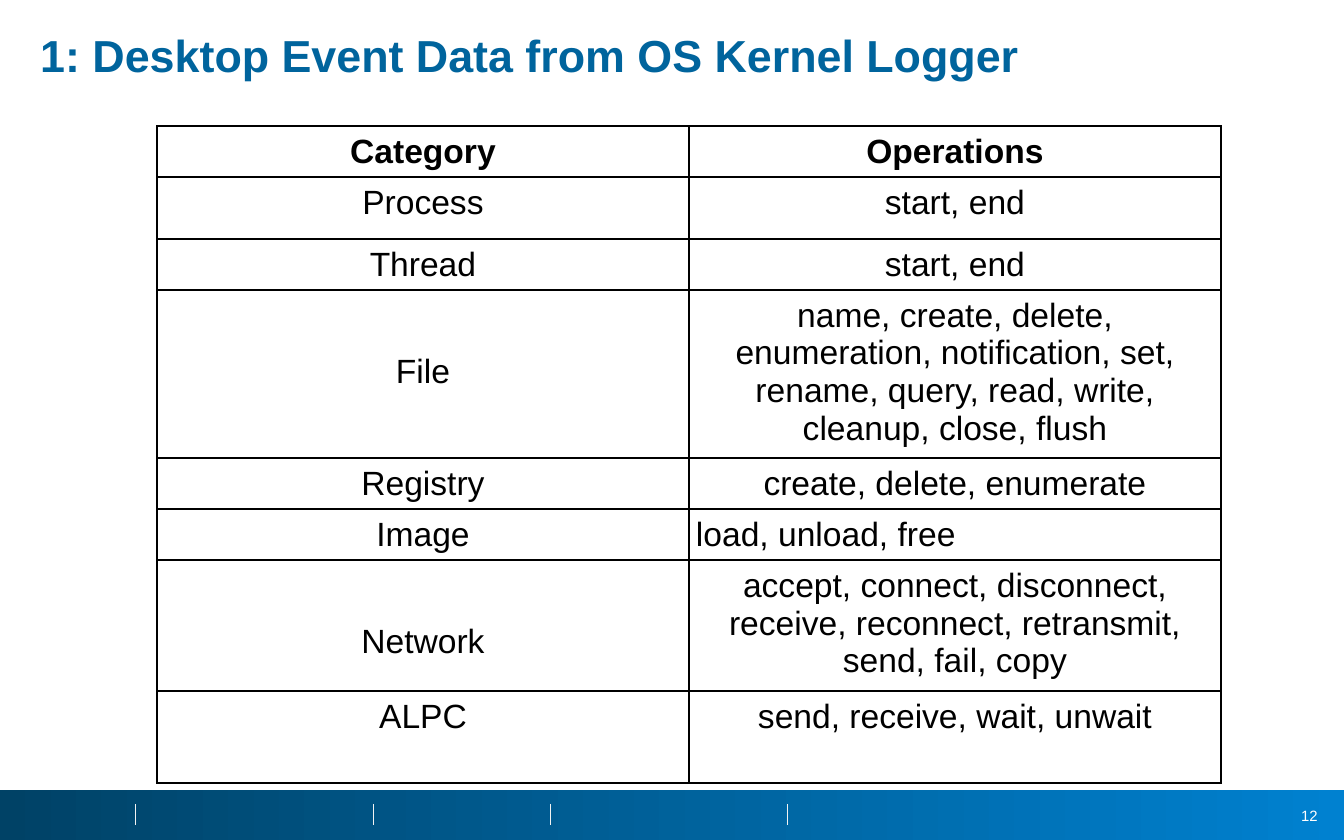
from lxml.etree import SubElement
from pptx import Presentation
from pptx.dml.color import RGBColor
from pptx.enum.shapes import MSO_CONNECTOR, MSO_SHAPE
from pptx.enum.text import MSO_ANCHOR as Anchor, PP_ALIGN as Align
from pptx.oxml.ns import qn
from pptx.util import Pt

EMU_PER_PX = 914400 / 134.4
FONT = "Arial"
COLORS = {
    "title": "00649D",
    "text": "000000",
    "bar_start": "004266",
    "bar_end": "0081D0",
    "divider": "F2F2F2",
    "page": "FFFFFF",
}
DIVIDERS = [135, 373, 550, 787]
HEADER = ("Category", "Operations", 51)
EVENTS = [
    ("Process", "start, end", 62),
    ("Thread", "start, end", 51),
    ("File", "name, create, delete, enumeration, notification, set, rename, "
             "query, read, write, cleanup, close, flush", 164),
    ("Registry", "create, delete, enumerate", 51),
    ("Image", "load, unload, free", 51),
    ("Network", "accept, connect, disconnect, receive, reconnect, retransmit, "
                "send, fail, copy", 131),
    ("ALPC", "send, receive, wait, unwait", 92),
]
TALL_LINES = {"File", "Network"}
LEFT_ALIGNED = {"load, unload, free"}


def px(length):
    """Turn pixels into EMU."""
    return round(length * EMU_PER_PX)


def rgb(name):
    """Look up a named colour."""
    return RGBColor.from_string(COLORS[name])


def write(frame, text, size, color, bold=False, align=Align.LEFT, spacing=None):
    """Write one styled paragraph into a text frame."""
    paragraph = frame.paragraphs[0]
    paragraph.text = text
    paragraph.alignment = align
    if spacing:
        paragraph.line_spacing = spacing
    font = paragraph.font
    font.name, font.size, font.bold = FONT, Pt(size), bold
    font.color.rgb = rgb(color)


def add_label(slide, box, text, size, color, anchor=Anchor.TOP, **style):
    """Add a wrapping text box."""
    frame = slide.shapes.add_textbox(*map(px, box)).text_frame
    frame.word_wrap = True
    frame.vertical_anchor = anchor
    write(frame, text, size, color, **style)


def add_footer_bar(slide):
    """Add the gradient bar along the bottom edge."""
    bar = slide.shapes.add_shape(MSO_SHAPE.RECTANGLE, 0, px(790), px(1344), px(50))
    bar.shadow.inherit = False
    bar.line.fill.background()
    bar.fill.gradient()
    bar.fill.gradient_angle = 0
    for stop, name in zip(bar.fill.gradient_stops, ("bar_start", "bar_end")):
        stop.color.rgb = rgb(name)


def add_divider(slide, x):
    """Add a thin vertical line on the footer bar."""
    divider = slide.shapes.add_connector(
        MSO_CONNECTOR.STRAIGHT, px(x), px(804), px(x), px(825))
    divider.line.color.rgb = rgb("divider")
    divider.line.width = Pt(0.25)
    SubElement(divider._element.spPr, qn("a:effectLst"))


def style_cell(cell):
    """Give a cell black borders, no fill and no margin under its text."""
    properties = cell._tc.get_or_add_tcPr()
    for side in ("lnL", "lnR", "lnT", "lnB"):
        border = SubElement(properties, qn(f"a:{side}"), w=str(Pt(1)))
        solid = SubElement(border, qn("a:solidFill"))
        SubElement(solid, qn("a:srgbClr"), val=COLORS["text"])
    cell.fill.background()
    cell.margin_left = cell.margin_right = cell.margin_top = px(7)
    cell.margin_bottom = 0


def add_event_table(slide):
    """Add the table of event categories and their operations."""
    rows = [HEADER, *EVENTS]
    height = sum(row[-1] for row in rows)
    table = slide.shapes.add_table(
        len(rows), 2, px(157), px(126), px(1064), px(height)).table
    table.first_row = table.horz_banding = False
    for row_index, (category, operations, row_height) in enumerate(rows):
        table.rows[row_index].height = px(row_height)
        for column_index, text in enumerate((category, operations)):
            cell = table.cell(row_index, column_index)
            style_cell(cell)
            write(cell.text_frame, text, 18, "text", bold=row_index == 0,
                  align=Align.LEFT if text in LEFT_ALIGNED else Align.CENTER,
                  spacing=2.5 if text in TALL_LINES else None)


def main():
    """Build and save the slide."""
    deck = Presentation()
    deck.slide_width, deck.slide_height = px(1344), px(840)
    slide = deck.slides.add_slide(deck.slide_layouts[6])
    add_footer_bar(slide)
    add_label(slide, (1275, 799, 56, 32), "12", 8, "page",
              anchor=Anchor.MIDDLE, align=Align.RIGHT)
    for x in DIVIDERS:
        add_divider(slide, x)
    add_label(slide, (27, 27, 1289, 83), "1: Desktop Event Data from OS Kernel Logger",
              24, "title", bold=True, spacing=0.9)
    add_event_table(slide)
    deck.save("out.pptx")


if __name__ == "__main__":
    main()
